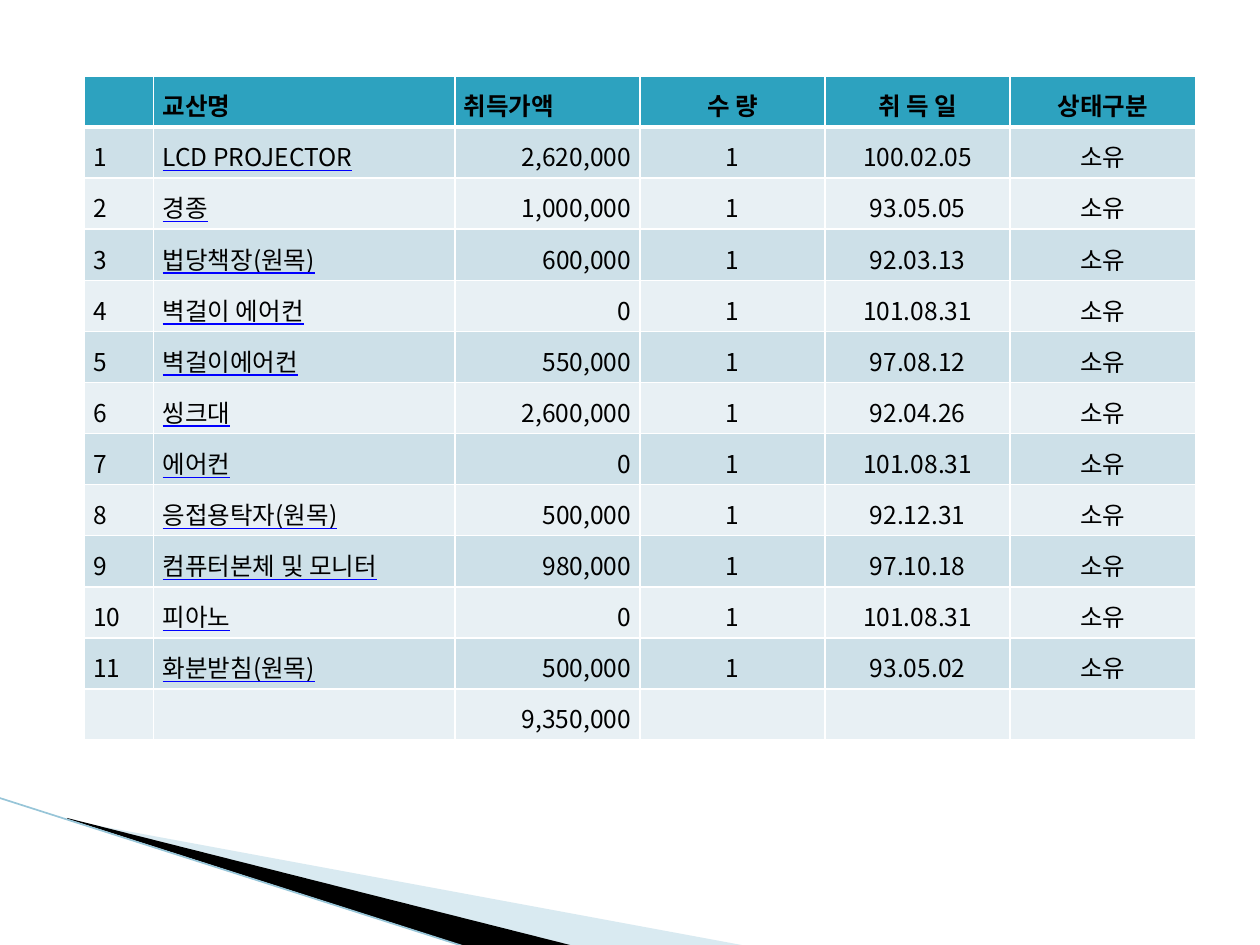
import pptx
import pptx.util
import pptx.dml.color
import pptx.enum.text
import pptx.enum.shapes
import pptx.oxml
import pptx.oxml.ns
import lxml.etree

Cm = pptx.util.Cm
Pt = pptx.util.Pt
ALIGN = pptx.enum.text.PP_ALIGN
FONT = "Noto Sans CJK KR"
SIZE = 14
EDGES = ("a:lnL", "a:lnR", "a:lnT", "a:lnB")

HEAD = ("", "교산명", "취득가액", "수 량", "취 득 일", "상태구분")
ITEMS = [
    ("LCD PROJECTOR", "2,620,000", "100.02.05"),
    ("경종", "1,000,000", "93.05.05"),
    ("법당책장(원목)", "600,000", "92.03.13"),
    ("벽걸이 에어컨", "0", "101.08.31"),
    ("벽걸이에어컨", "550,000", "97.08.12"),
    ("씽크대", "2,600,000", "92.04.26"),
    ("에어컨", "0", "101.08.31"),
    ("응접용탁자(원목)", "500,000", "92.12.31"),
    ("컴퓨터본체 및 모니터", "980,000", "97.10.18"),
    ("피아노", "0", "101.08.31"),
    ("화분받침(원목)", "500,000", "93.05.02"),
]
TOTAL = ("", "", "9,350,000", "", "", "")


def rgb(code):
    return pptx.dml.color.RGBColor.from_string(code)


def sub(node, tag, **attrs):
    return lxml.etree.SubElement(node, pptx.oxml.ns.qn(tag), **attrs)


def paint(part, code):
    part.fill.solid()
    part.fill.fore_color.rgb = rgb(code)


def add_run(para, text, bold=False, under=False):
    run = para.add_run()
    run.text = text
    font = run.font
    font.size, font.bold = Pt(SIZE), bold
    font.color.rgb = rgb("000000")
    props = run._r.get_or_add_rPr()
    if under:  # blue underline below black text
        font.underline = True
        fill = sub(sub(props, "a:uFill"), "a:solidFill")
        sub(fill, "a:srgbClr", val="0000FF")
    font.name = FONT
    sub(props, "a:ea", typeface=FONT)


def set_edges(cell, base):
    props = cell._tc.get_or_add_tcPr()
    for tag in EDGES:
        width = base if tag == "a:lnB" else 1
        line = sub(props, tag, w=str(Pt(width)))
        sub(sub(line, "a:solidFill"), "a:srgbClr", val="FFFFFF")


def fill_cell(cell, text, align, color, bold, under, base):
    cell.margin_left = cell.margin_right = Cm(0.18)
    cell.margin_top = cell.margin_bottom = Cm(0.05)
    cell.vertical_anchor = pptx.enum.text.MSO_ANCHOR.MIDDLE
    set_edges(cell, base)
    paint(cell, color)
    para = cell.text_frame.paragraphs[0]
    para.alignment, para.line_spacing = align, 1.2
    if text:
        add_run(para, text, bold, under)
    else:
        sub(para._p, "a:endParaRPr", sz=str(SIZE * 100))


def add_list(slide, left, top, width, height):
    """Asset table: header, numbered items and total."""
    body = [(str(num), name, cost, "1", date, "소유")
            for num, (name, cost, date) in enumerate(ITEMS, 1)]
    rows = [HEAD, *body, TOTAL]
    frame = slide.shapes.add_table(len(rows), len(HEAD), Cm(left), Cm(top),
                                   Cm(width), Cm(height))
    table = frame.table
    first, second = 1.4, 6.07
    rest = (width - first - second) / 4
    for col, size in zip(table.columns, (first, second, *[rest] * 4)):
        col.width = Cm(size)
    for r, row in enumerate(rows):
        table.rows[r].height = Cm(height / len(rows))
        head = r == 0
        color = "2DA2BF" if head else ("E8F0F4", "CDE0E8")[r % 2]
        for c, text in enumerate(row):
            align = ALIGN.JUSTIFY if c < 2 else ALIGN.CENTER
            if c == 2:
                align = ALIGN.JUSTIFY if head else ALIGN.RIGHT
            fill_cell(table.cell(r, c), text, align, color, head,
                      c == 1 and not head, 3 if head else 1)


def add_wedge(slide, left, top, points, color, alpha=100):
    spots = [(Cm(left + x), Cm(top + y)) for x, y in points]
    build = slide.shapes.build_freeform(*spots[0])
    build.add_line_segments(spots[1:], close=True)
    shape = build.convert_to_shape()
    shape.shadow.inherit = False
    shape.line.fill.background()
    paint(shape, color)
    if alpha < 100:
        tone = shape._element.spPr.find(".//" + pptx.oxml.ns.qn("a:srgbClr"))
        sub(tone, "a:alpha", val=str(alpha * 1000))


def add_corner(slide, left, top):
    """Slanted bands at the lower left."""
    # Pale band, then dark band
    add_wedge(slide, left, top, [(1.4, 0.46), (15.11, 3), (11.58, 3),
                                 (1.4, 0.43)], "A0CBDC", 40)
    add_wedge(slide, left, top, [(1.35, 0.41), (11.61, 3), (9.45, 3.02),
                                 (1.37, 0.43)], "000000")
    # Thin edge line
    line = slide.shapes.add_connector(
        pptx.enum.shapes.MSO_CONNECTOR.STRAIGHT, Cm(left - 0.03), Cm(top),
        Cm(left + 9.42), Cm(top + 3.02))
    line.line.color.rgb = rgb("97C5D8")
    line.line.width = Pt(0.95)
    sub(line._element.spPr, "a:effectLst")


def main():
    deck = pptx.Presentation()
    deck.slide_width, deck.slide_height = Cm(25.4), Cm(19.05)
    slide = deck.slides.add_slide(deck.slide_layouts[6])
    add_corner(slide, 0, 16.08)
    add_list(slide, 1.7, 1.53, 22.4, 13.39)
    deck.save("out.pptx")


if __name__ == "__main__":
    main()
